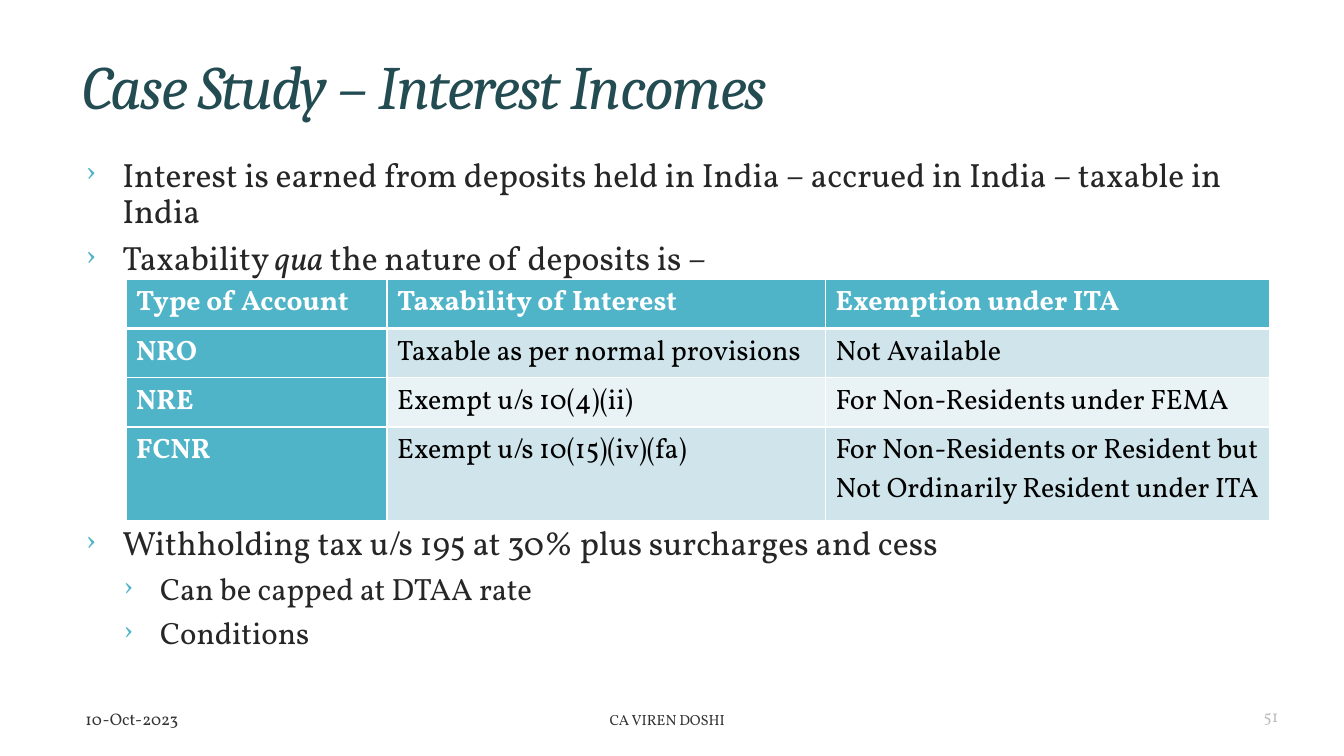
from dataclasses import dataclass, field
from typing import Any

from lxml.etree import SubElement
from pptx import Presentation
from pptx.dml.color import RGBColor as Color
from pptx.enum.text import MSO_ANCHOR as Anchor, PP_ALIGN as Align
from pptx.oxml import parse_xml
from pptx.oxml.ns import nsdecls, qn
from pptx.util import Pt

COLORS = {
    "title": "234B52", "body": "262626", "accent": "50B4C8",
    "band": "D0E5EB", "light": "E9F2F5", "white": "FFFFFF",
    "black": "000000", "footer": "333333", "number": "BFBFBF",
}
BODY_FONT = "Vollkorn"
INDENT = 27


@dataclass
class Span:
    text: str
    italic: bool = False


@dataclass
class Line:
    spans: list[Span]
    size: float
    color: str
    font: str = BODY_FONT
    bullet_level: int | None = None
    tracking: int = 0
    format: dict[str, Any] = field(default_factory=dict)


@dataclass
class Box:
    left: float
    top: float
    width: float
    height: float
    anchor: Anchor
    lines: list[Line]


def bullet(*spans: Span, level: int = 0) -> Line:
    spacing = {"line_spacing": 0.9, "space_before": Pt(5),
               "space_after": Pt(3), "level": level}
    return Line(list(spans), 24 - 2 * level, "body", bullet_level=level, format=spacing)


def footer(text: str, size: float, color: str, align: Align) -> list[Line]:
    return [Line([Span(text)], size, color, format={"alignment": align})]


def set_all(target: Any, values: dict[str, Any]) -> None:
    for name, value in values.items():
        setattr(target, name, value)


def style_font(font: Any, color: str, **values: Any) -> None:
    set_all(font, values)
    font.color.rgb = Color.from_string(COLORS[color])


def add_bullet(para: Any, level: int) -> None:
    props = para._p.get_or_add_pPr()
    props.set("marL", str(Pt(INDENT * (level + 1))))
    props.set("indent", str(Pt(-INDENT)))
    color = SubElement(props, qn("a:buClr"))
    SubElement(color, qn("a:srgbClr")).set("val", COLORS["accent"])
    SubElement(props, qn("a:buFont")).set("typeface", BODY_FONT)
    SubElement(props, qn("a:buChar")).set("char", "›")


def draw_box(page: Any, box: Box) -> None:
    shape = page.shapes.add_textbox(Pt(box.left), Pt(box.top), Pt(box.width), Pt(box.height))
    frame = shape.text_frame
    set_all(frame, {"word_wrap": True, "vertical_anchor": box.anchor})
    for index, line in enumerate(box.lines):
        para = frame.add_paragraph() if index else frame.paragraphs[0]
        set_all(para, line.format)
        if line.bullet_level is not None:
            add_bullet(para, line.bullet_level)
        for span in line.spans:
            run = para.add_run()
            run.text = span.text
            style_font(run.font, line.color, name=line.font,
                       size=Pt(line.size), italic=span.italic)
            if line.tracking:
                run.font._element.set("spc", str(line.tracking))


def add_borders(cell: Any, row: int) -> None:
    widths = {"L": 1, "R": 1, "T": 3 if row == 1 else 1, "B": 3 if row == 0 else 1}
    props = cell._tc.get_or_add_tcPr()
    for index, (side, width) in enumerate(widths.items()):
        props.insert(index, parse_xml(
            f'<a:ln{side} {nsdecls("a")} w="{Pt(width)}"><a:solidFill>'
            f'<a:srgbClr val="{COLORS["white"]}"/></a:solidFill></a:ln{side}>'))


def draw_table(page: Any, left: float, top: float, widths: list[float],
               heights: list[float], rows: list[list[str]]) -> None:
    table = page.shapes.add_table(
        len(rows), len(widths), Pt(left), Pt(top), Pt(sum(widths)), Pt(sum(heights))).table
    set_all(table, {"first_row": True, "first_col": True, "horz_banding": True})
    for column, width in zip(table.columns, widths):
        column.width = Pt(width)
    for row, (texts, height) in enumerate(zip(rows, heights)):
        table.rows[row].height = Pt(height)
        for column, text in enumerate(texts):
            heading = row == 0 or column == 0
            fill = "accent" if heading else "band" if row % 2 else "light"
            cell = table.cell(row, column)
            cell.fill.solid()
            cell.fill.fore_color.rgb = Color.from_string(COLORS[fill])
            add_borders(cell, row)
            run = cell.text_frame.paragraphs[0].add_run()
            run.text = text
            style_font(run.font, "white" if heading else "black",
                       name=BODY_FONT, size=Pt(20), bold=heading)


# Title, bullets around the table, and footer
BOXES = [
    Box(51.84, 28, 848, 74, Anchor.MIDDLE, [
        Line([Span("Case Study – Interest Incomes", italic=True)], 44, "title", "Cambria",
             tracking=-120, format={"line_spacing": 0.85})]),
    Box(53.28, 109.44, 846.72, 90, Anchor.TOP, [
        bullet(Span("Interest is earned from deposits held in India – "
                    "accrued in India – taxable in India")),
        bullet(Span("Taxability "), Span("qua", italic=True),
               Span(" the nature of deposits is –"))]),
    Box(53.28, 372.5, 846.72, 110.5, Anchor.TOP, [
        bullet(Span("Withholding tax u/s 195 at 30% plus surcharges and cess")),
        bullet(Span("Can be capped at DTAA rate"), level=1),
        bullet(Span("Conditions"), level=1)]),
    Box(54, 504.72, 324, 18, Anchor.MIDDLE, footer("10-Oct-2023", 12, "footer", Align.LEFT)),
    Box(278.64, 504.72, 396, 18, Anchor.MIDDLE,
        footer("CA VIREN DOSHI", 10.5, "footer", Align.CENTER)),
    Box(698.4, 504.72, 221.76, 17.28, Anchor.BOTTOM, footer("51", 12, "number", Align.RIGHT)),
]

ACCOUNTS = [
    ["Type of Account", "Taxability of Interest", "Exemption under ITA"],
    ["NRO", "Taxable as per normal provisions", "Not Available"],
    ["NRE", "Exempt u/s 10(4)(ii)", "For Non-Residents under FEMA"],
    ["FCNR", "Exempt u/s 10(15)(iv)(fa)",
     "For Non-Residents or Resident but Not Ordinarily Resident under ITA"],
]


def main() -> None:
    deck = Presentation()
    set_all(deck, {"slide_width": Pt(960), "slide_height": Pt(540)})
    page = deck.slides.add_slide(deck.slide_layouts[6])
    for box in BOXES:
        draw_box(page, box)
    draw_table(page, 90, 199.44, [186.5, 313.2, 317.5], [35.2] * 3 + [67], ACCOUNTS)
    deck.save("out.pptx")


if __name__ == "__main__":
    main()
